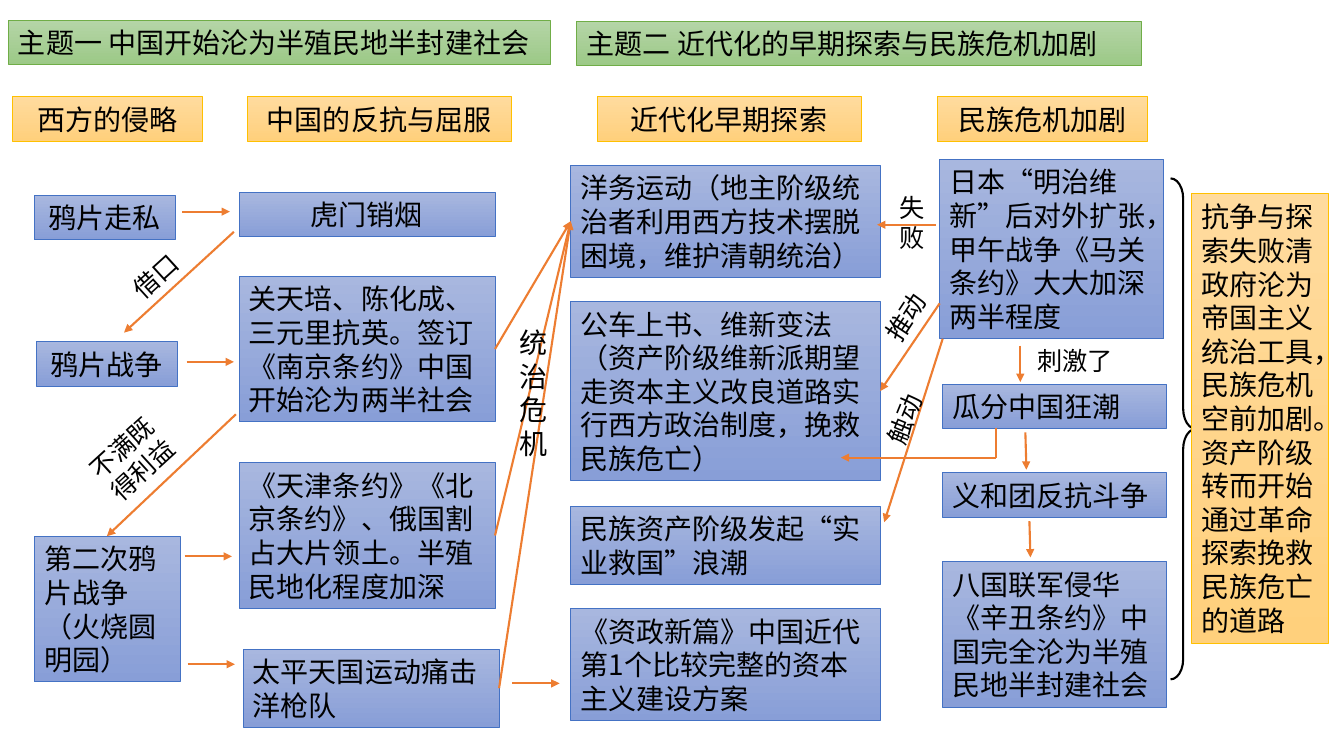
from lxml import etree
from pptx import Presentation
from pptx.dml.color import RGBColor
from pptx.enum.shapes import MSO_CONNECTOR, MSO_SHAPE
from pptx.enum.text import MSO_ANCHOR, MSO_AUTO_SIZE, PP_ALIGN
from pptx.oxml.ns import qn
from pptx.util import Inches, Pt

STRAIGHT = MSO_CONNECTOR.STRAIGHT
RECTANGLE = MSO_SHAPE.RECTANGLE
RIGHT_BRACE = MSO_SHAPE.RIGHT_BRACE
MIDDLE = MSO_ANCHOR.MIDDLE
FIT_TEXT = MSO_AUTO_SIZE.SHAPE_TO_FIT_TEXT
CENTER = PP_ALIGN.CENTER
LEFT = PP_ALIGN.LEFT

FONT = "Noto Sans CJK SC"
COLORS = {"text": "000000", "label": "FFFFFF", "arrow": "ED7D31", "brace": "000000"}
THEMES = {
    "green": ("B5D5A7", "9CC987", "70AD47"),
    "gold": ("FFDB9E", "FFD07C", "FFC000"),
    "blue": ("A8B7DF", "889ED7", "4472C4"),
}
LINE_HEIGHT = 0.335
BOX_PADDING = 0.105

TOPICS = [
    ("主题一 中国开始沦为半殖民地半封建社会", 0.08, 0.2, 5.38),
    ("主题二 近代化的早期探索与民族危机加剧", 5.72, 0.21, 5.6),
]
HEADINGS = [
    ("西方的侵略", 0.12, 1.89),
    ("中国的反抗与屈服", 2.45, 2.62),
    ("近代化早期探索", 5.92, 2.62),
    ("民族危机加剧", 9.3, 2.08),
]
HEADING_TOP = 0.96
EVENTS = {
    "smuggling": ("鸦片走私", 0.34, 1.94, 1.4, 1, CENTER),
    "opium_war": ("鸦片战争", 0.36, 3.39, 1.4, 1, CENTER),
    "second_war": ("第二次鸦片战争（火烧圆明园）", 0.34, 5.32, 1.45, 4, LEFT),
    "humen": ("虎门销烟", 2.37, 1.91, 2.54, 1, CENTER),
    "nanjing": ("关天培、陈化成、三元里抗英。签订《南京条约》中国开始沦为两半社会",
                2.37, 2.74, 2.54, 4, LEFT),
    "tianjin": ("《天津条约》《北京条约》、俄国割占大片领土。半殖民地化程度加深",
                2.37, 4.59, 2.54, 4, LEFT),
    "taiping": ("太平天国运动痛击洋枪队", 2.41, 6.44, 2.54, 2, LEFT),
    "westernization": ("洋务运动（地主阶级统治者利用西方技术摆脱困境，维护清朝统治）",
                       5.66, 1.64, 3.07, 3, LEFT),
    "reform": ("公车上书、维新变法（资产阶级维新派期望走资本主义改良道路实行西方政治制度，挽救民族危亡）",
               5.66, 2.99, 3.07, 5, LEFT),
    "industry": ("民族资产阶级发起“实业救国”浪潮", 5.66, 5.02, 3.07, 2, LEFT),
    "new_treatise": ("《资政新篇》中国近代第1个比较完整的资本主义建设方案",
                     5.66, 6.04, 3.07, 3, LEFT),
    "japan": ("日本“明治维新”后对外扩张，甲午战争《马关条约》大大加深两半程度",
              9.32, 1.58, 2.22, 5, LEFT),
    "partition": ("瓜分中国狂潮", 9.35, 3.81, 2.22, 1, LEFT),
    "boxers": ("义和团反抗斗争", 9.35, 4.69, 2.22, 1, LEFT),
    "allied_invasion": ("八国联军侵华《辛丑条约》中国完全沦为半殖民地半封建社会",
                        9.35, 5.57, 2.22, 4, LEFT),
}
CONCLUSION = ("抗争与探索失败清政府沦为帝国主义统治工具，民族危机空前加剧。资产阶级转而开始通过革命探索挽救民族危亡的道路",
              11.82, 1.92, 1.36, 13)
BRACE = (11.61, 1.77, 0.25, 4.97)
BRACE_CURVE = 0.8

WHITE_LABELS = [
    ("借口", 1.19, 2.53, 0.71, 0.4, 317.7, 18),
    ("不满既得利益", 0.82, 4.15, 1.07, 0.71, 317.6, 18),
]
PLAIN_LABELS = [
    ("失败", 8.82, 1.85, 0.35, 0.71, 0, 18),
    ("统治危机", 5.05, 3.17, 0.39, 1.45, 0, 20),
    ("推动", 8.61, 2.9, 0.8, 0.4, 303.3, 18),
    ("刺激了", 10.19, 3.38, 1.06, 0.4, 0, 18),
    ("触动", 8.59, 3.91, 0.8, 0.4, 292.2, 18),
]
ARROWS = [
    ((1.81, 2.1), (2.28, 2.1)),
    ((1.85, 3.59), (2.32, 3.59)),
    ((1.83, 5.52), (2.3, 5.52)),
    ((1.86, 6.59), (2.33, 6.59)),
    ((5.08, 6.78), (5.55, 6.78)),
    ((2.32, 2.3), (1.23, 3.3)),
    ((2.34, 4.11), (1.06, 5.32)),
    ((9.28, 2.23), (8.7, 2.23)),
    ((9.35, 3.36), (8.77, 5.18)),
    ((10.12, 3.43), (10.12, 3.79)),
    ((10.17, 4.29), (10.18, 4.66)),
    ((10.21, 5.17), (10.22, 5.53)),
    ((9.88, 4.54), (8.34, 4.54)),
]
ELBOW_STEM = ((9.88, 4.54), (9.88, 4.25))
CRISIS_SOURCES = ["nanjing", "tianjin", "taiping"]
LEFT_SIDE, RIGHT_SIDE = 1, 3


def rgb(value):
    return RGBColor.from_string(value)


def write(shape, text, size, align=LEFT):
    frame = shape.text_frame
    frame.word_wrap = True
    frame.auto_size = FIT_TEXT
    frame.vertical_anchor = MIDDLE
    paragraph = frame.paragraphs[0]
    paragraph.alignment = align
    run = paragraph.add_run()
    run.text = text
    run.font.name = FONT
    run.font.size = Pt(size)
    run.font.color.rgb = rgb(COLORS["text"])
    east_asian = etree.SubElement(run.font._element, qn("a:ea"))
    east_asian.set("typeface", FONT)


def add_box(slide, theme, text, left, top, width, lines=1, align=LEFT):
    height = BOX_PADDING + lines * LINE_HEIGHT
    box = slide.shapes.add_shape(RECTANGLE, *map(Inches, (left, top, width, height)))
    box.shadow.inherit = False
    light, dark, edge = THEMES[theme]
    box.fill.gradient()
    box.fill.gradient_angle = 270
    for stop, color in zip(box.fill.gradient_stops, (light, dark)):
        stop.color.rgb = rgb(color)
    box.line.color.rgb = rgb(edge)
    box.line.width = Pt(0.5)
    write(box, text, 20, align)
    return box


def add_label(slide, text, left, top, width, height, rotation, size):
    label = slide.shapes.add_textbox(*map(Inches, (left, top, width, height)))
    label.rotation = rotation
    write(label, text, size)
    return label


def add_line(slide, start, end, arrowhead=True):
    line = slide.shapes.add_connector(STRAIGHT, *map(Inches, start + end))
    line.line.color.rgb = rgb(COLORS["arrow"])
    line.line.width = Pt(1.5)
    if arrowhead:
        etree.SubElement(line.line._get_or_add_ln(), qn("a:tailEnd")).set("type", "triangle")
    etree.SubElement(line._element.spPr, qn("a:effectLst"))
    return line


def main():
    deck = Presentation()
    deck.slide_width, deck.slide_height = Inches(13.33), Inches(7.5)
    slide = deck.slides.add_slide(deck.slide_layouts[6])

    for label in WHITE_LABELS:
        backing = add_label(slide, *label).fill
        backing.solid()
        backing.fore_color.rgb = rgb(COLORS["label"])

    for topic in TOPICS:
        add_box(slide, "green", *topic)
    for text, left, width in HEADINGS:
        add_box(slide, "gold", text, left, HEADING_TOP, width, align=CENTER)
    events = {key: add_box(slide, "blue", *event) for key, event in EVENTS.items()}

    brace = slide.shapes.add_shape(RIGHT_BRACE, *map(Inches, BRACE))
    brace.shadow.inherit = False
    brace.adjustments[0] = BRACE_CURVE
    brace.fill.background()
    brace.line.color.rgb = rgb(COLORS["brace"])
    brace.line.width = Pt(1.5)
    add_box(slide, "gold", *CONCLUSION)

    for start, end in ARROWS:
        add_line(slide, start, end)
    add_line(slide, *ELBOW_STEM, arrowhead=False)
    for source in CRISIS_SOURCES:
        crisis = add_line(slide, (4.91, 3.47), (5.66, 2.2))
        crisis.begin_connect(events[source], RIGHT_SIDE)
        crisis.end_connect(events["westernization"], LEFT_SIDE)
    push = add_line(slide, (9.32, 3.01), (8.73, 3.88))
    push.end_connect(events["reform"], RIGHT_SIDE)

    for label in PLAIN_LABELS:
        add_label(slide, *label)

    deck.save("out.pptx")


if __name__ == "__main__":
    main()
